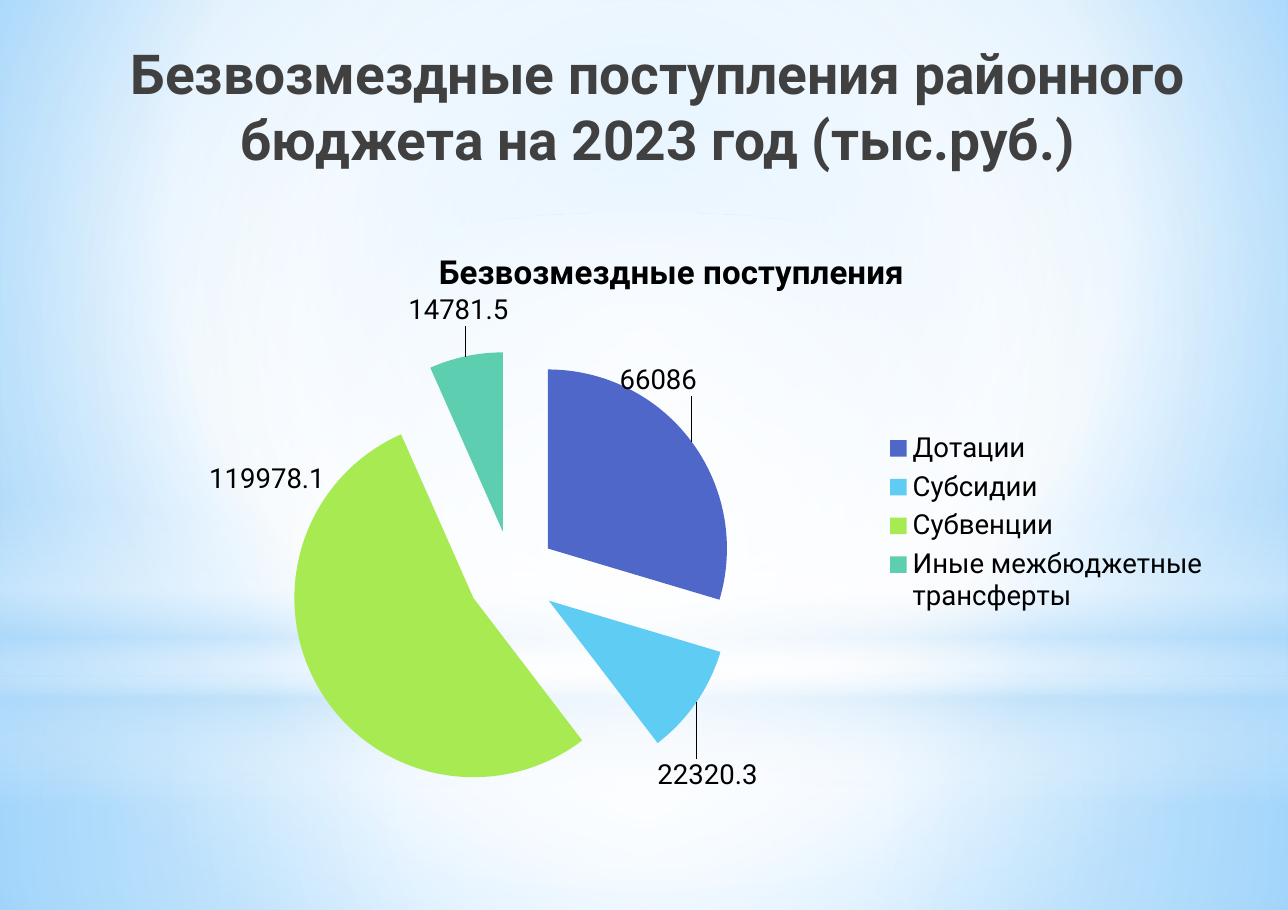
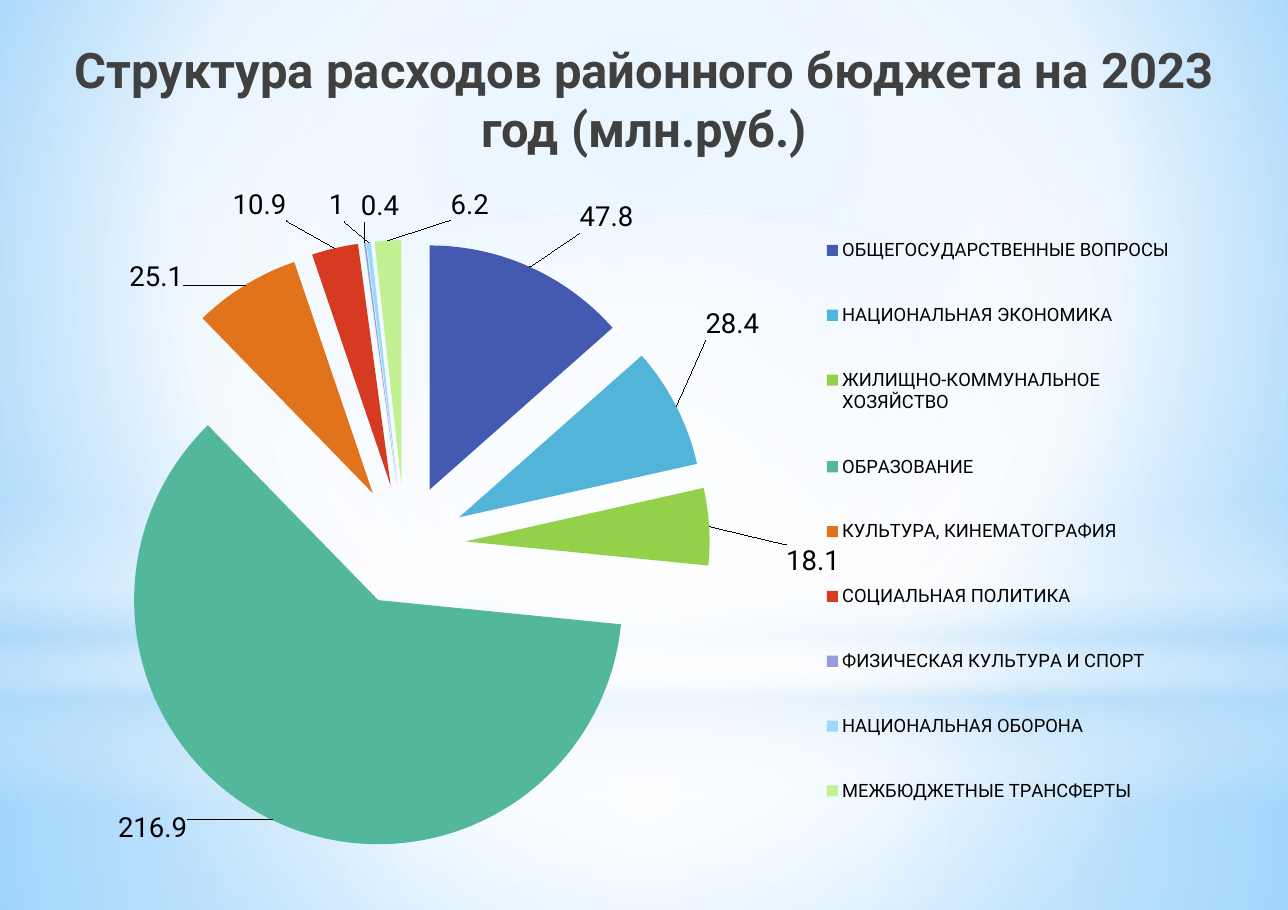
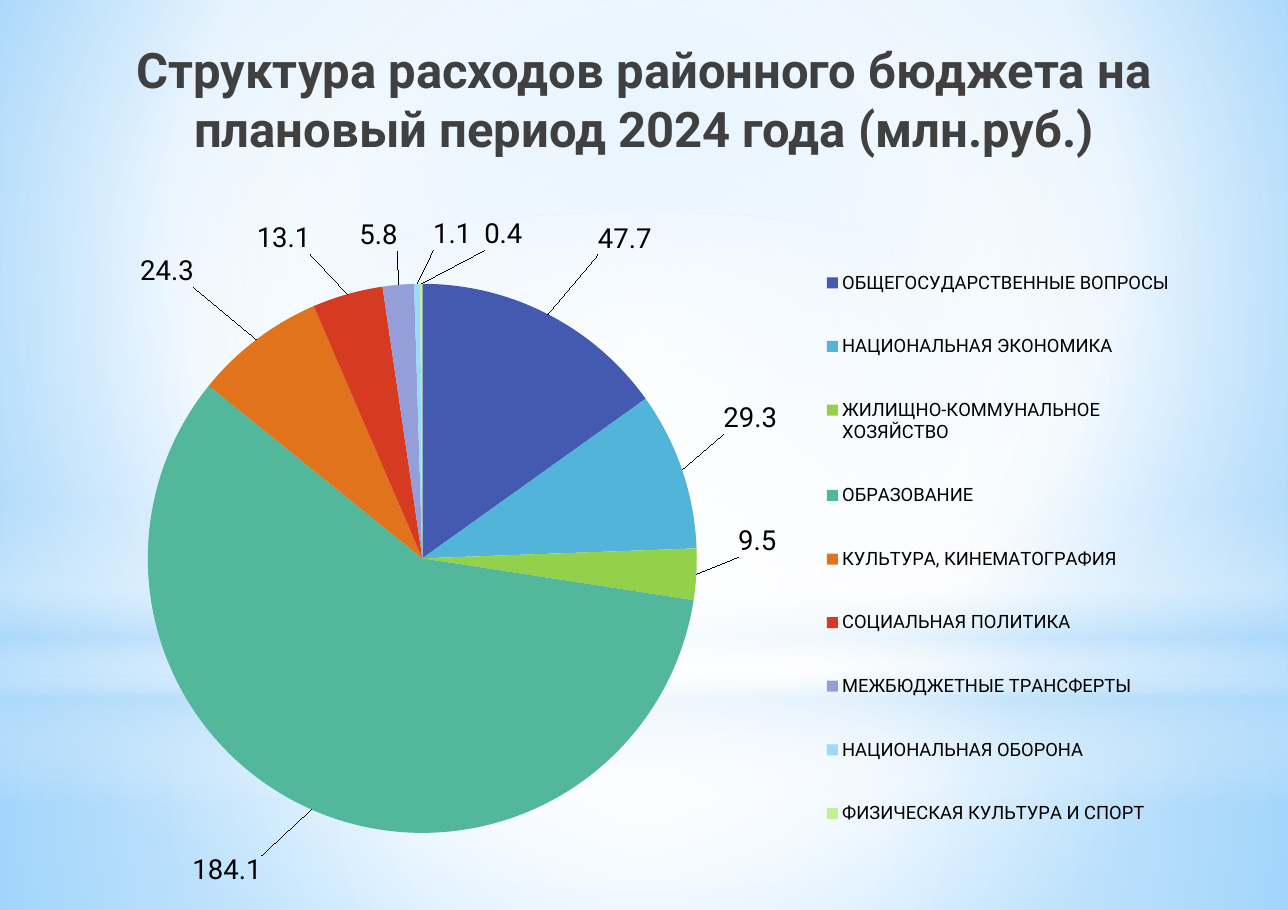
from dataclasses import dataclass

import pptx
import pptx.chart.data
import pptx.dml.color
import pptx.enum.chart
import pptx.enum.shapes
import pptx.enum.text
import pptx.oxml
import pptx.oxml.ns
import pptx.util

Cm = pptx.util.Cm
Pt = pptx.util.Pt
qn = pptx.oxml.ns.qn

FONT = "Roboto"
COLORS = {
    "title": "404040", "text": "000000", "white": "FFFFFF", "haze": "B4DCFA",
    "sky": "9ED5FF", "deep": "5BB9FF",
}
BRIGHT = ["4E67C8", "5ECCF3", "A7EA52", "5DCEAF"]
MUTED = ["4459B0", "52B4D8", "94D14A", "53B79B", "E2731D",
         "D63A20", "949ED8", "9ADAF8", "C1F192"]

Box = tuple[float, float, float, float]
Stop = tuple[int, str, int]  # position %, colour name, opacity %


@dataclass
class Band:
    kind: str
    box: Box
    stops: list[Stop]
    center: Box | None = (50, 50, 50, 50)


@dataclass
class Slice:
    name: str
    value: float
    shift: tuple[float, float]  # label offset, share of the chart size


@dataclass
class Page:
    title: str
    size: int
    frame: Box
    area: Box
    plot: Box
    legend: Box
    key_size: int
    series: str
    colors: list[str]
    slices: list[Slice]
    burst: int = 0
    heading: bool = False


BACK = [(0, "sky", 100), (60, "white", 100), (100, "deep", 100)]

BANDS = [
    Band("RECTANGLE", (0, 15.62, 29.7, 5.36),
         [(0, "white", 91), (37, "white", 76), (100, "haze", 79)]),
    Band("RECTANGLE", (0, 0, 29.7, 15.62),
         [(0, "white", 89), (48, "white", 62), (100, "haze", 79)]),
    Band("RECTANGLE", (0, 11.53, 29.7, 6.99),
         [(0, "white", 0), (29, "white", 30), (45, "haze", 40),
          (55, "white", 26), (65, "haze", 60), (100, "white", 0)], None),
    Band("OVAL", (0, 4.9, 29.7, 15.62), [(0, "white", 100), (56, "white", 0)]),
]

STATE = "ОБЩЕГОСУДАРСТВЕННЫЕ ВОПРОСЫ"
TRADE = "НАЦИОНАЛЬНАЯ ЭКОНОМИКА"
HOUSING = "ЖИЛИЩНО-КОММУНАЛЬНОЕ ХОЗЯЙСТВО"
SCHOOL = "ОБРАЗОВАНИЕ"
CULTURE = "КУЛЬТУРА, КИНЕМАТОГРАФИЯ"
SOCIAL = "СОЦИАЛЬНАЯ ПОЛИТИКА"
SPORT = "ФИЗИЧЕСКАЯ КУЛЬТУРА И СПОРТ"
DEFENCE = "НАЦИОНАЛЬНАЯ ОБОРОНА"
GRANTS = "МЕЖБЮДЖЕТНЫЕ ТРАНСФЕРТЫ"

PAGES = [
    Page("Безвозмездные поступления районного бюджета на 2023 год (тыс.руб.)",
         36, (1.3, 0.76, 27.74, 3.61), (2.79, 5.21, 25.4, 13.54),
         (0.19, 0.29, 0.33, 0.61), (0.69, 0.34, 0.3, 0.33), 18,
         "Безвозмездные поступления", BRIGHT,
         [Slice("Дотации", 66086, (-0.07, -0.07)),
          Slice("Субсидии", 22320.3, (-0.04, 0.09)),
          Slice("Субвенции", 119978.1, (0.01, -0.39)),
          Slice("Иные межбюджетные трансферты", 14781.5, (0.04, -0.04))],
         burst=25, heading=True),
    Page("Структура расходов районного бюджета на 2023 год (млн.руб.)",
         32, (0.89, 0.76, 27.94, 3.18), (0.66, 4.37, 27.1, 16.08),
         (0.11, 0.16, 0.42, 0.7), (0.67, 0.01, 0.31, 0.93), 12,
         "Series 1", MUTED,
         [Slice(STATE, 47.8, (0.04, -0.04)),
          Slice(TRADE, 28.4, (0.02, -0.09)),
          Slice(HOUSING, 18.1, (0.06, 0.05)),
          Slice(SCHOOL, 216.9, (-0.07, -0.02)),
          Slice(CULTURE, 25.1, (-0.05, 0.02)),
          Slice(SOCIAL, 10.9, (-0.04, -0.03)),
          Slice(SPORT, 0.4, (0.03, -0.02)),
          Slice(DEFENCE, 1, (-0.02, -0.02)),
          Slice(GRANTS, 6.2, (0.07, -0.02))],
         burst=25),
    Page("Структура расходов районного бюджета на плановый период 2024 года (млн.руб.)",
         32, (0.89, 0.76, 27.94, 3.18), (0.66, 5, 27.1, 15.44),
         (0.06, 0.1, 0.55, 0.82), (0.67, 0.02, 0.31, 0.95), 12,
         "Series 1", MUTED,
         [Slice(STATE, 47.7, (0.04, -0.08)),
          Slice(TRADE, 29.3, (0.03, -0.05)),
          Slice(HOUSING, 9.5, (0.03, -0.05)),
          Slice(SCHOOL, 184.1, (-0.04, 0.06)),
          Slice(CULTURE, 24.3, (-0.05, -0.07)),
          Slice(SOCIAL, 13.1, (-0.03, -0.05)),
          Slice(GRANTS, 5.8, (0, -0.04)),
          Slice(DEFENCE, 1.1, (0.03, -0.04)),
          Slice(SPORT, 0.4, (0.07, -0.04))]),
]


def rgb(code: str) -> pptx.dml.color.RGBColor:
    return pptx.dml.color.RGBColor.from_string(code)


def lengths(box: Box) -> list[int]:
    return [Cm(side) for side in box]


def blend(owner, stops: list[Stop], center: Box | None) -> None:
    """Turn the solid fill inside owner into a gradient, radial if it has a center."""
    marks = "".join(
        f'<a:gs pos="{pos * 1000}"><a:srgbClr val="{COLORS[name]}">'
        f'<a:alpha val="{alpha * 1000}"/></a:srgbClr></a:gs>'
        for pos, name, alpha in stops)
    if center:
        sides = " ".join(f'{side}="{share * 1000}"' for side, share in zip("ltrb", center))
        way = f'<a:path path="circle"><a:fillToRect {sides}/></a:path>'
    else:
        way = '<a:lin ang="5400000" scaled="0"/>'
    fill = pptx.oxml.parse_xml(
        f'<a:gradFill {pptx.oxml.ns.nsdecls("a")} rotWithShape="1">'
        f'<a:gsLst>{marks}</a:gsLst>{way}</a:gradFill>')
    solid = next(owner.iter(qn("a:solidFill")))
    solid.getparent().replace(solid, fill)


def place(owner, index: int, spots: tuple[float, ...], head: str = "") -> None:
    """Give a chart part a manual layout as its child number index."""
    for old in owner.findall(qn("c:layout")):
        owner.remove(old)
    parts = "".join(f'<c:{key} val="{spot}"/>' for key, spot in zip("xywh", spots))
    owner.insert(index, pptx.oxml.parse_xml(
        f'<c:layout {pptx.oxml.ns.nsdecls("c")}><c:manualLayout>'
        f'{head}{parts}</c:manualLayout></c:layout>'))


def dress(master, slide) -> None:
    """Set the background and bands on the master, drawing them through a slide."""
    back = master.background.fill
    back.solid()
    back.fore_color.rgb = rgb(COLORS["white"])
    blend(master.element, BACK, (20, 10, 20, 60))
    for i, band in enumerate(BANDS):
        kind = pptx.enum.shapes.MSO_SHAPE[band.kind]
        shape = slide.shapes.add_shape(kind, *lengths(band.box))
        shape.shadow.inherit = False
        shape.line.fill.background()
        shape.fill.solid()
        shape.fill.fore_color.rgb = rgb(COLORS["white"])
        blend(shape.element, band.stops, band.center)
        shape.element.nvSpPr.cNvPr.set("id", str(20 + i))
        master.shapes.element.insert(2 + i, shape.element)


def style(font, size: float, color: str, bold: bool = False) -> None:
    font.name = FONT
    font.size = Pt(size)
    font.bold = bold
    font.color.rgb = rgb(COLORS[color])


def head(slide, page: Page) -> None:
    title = slide.shapes.title
    title.left, title.top, title.width, title.height = lengths(page.frame)
    frame = title.text_frame
    frame.text = page.title
    frame.word_wrap = True
    frame.auto_size = pptx.enum.text.MSO_AUTO_SIZE.NONE
    frame.vertical_anchor = pptx.enum.text.MSO_ANCHOR.TOP
    frame.margin_left = frame.margin_right = Cm(0.28)
    frame.margin_top = frame.margin_bottom = Cm(0.15)
    line = frame.paragraphs[0]
    line.alignment = pptx.enum.text.PP_ALIGN.CENTER
    style(line.runs[0].font, page.size, "title", True)


def pie(slide, page: Page) -> None:
    enum = pptx.enum.chart
    data = pptx.chart.data.CategoryChartData()
    data.categories = [part.name for part in page.slices]
    data.add_series(page.series, [part.value for part in page.slices])
    chart = slide.shapes.add_chart(
        enum.XL_CHART_TYPE.PIE, *lengths(page.area), data).chart
    style(chart.font, 18, "text")

    chart.has_title = page.heading
    if page.heading:
        frame = chart.chart_title.text_frame
        frame.text = page.series
        style(frame.paragraphs[0].runs[0].font, 21.6, "text", True)

    chart.has_legend = True
    legend = chart.legend
    legend.position = enum.XL_LEGEND_POSITION.RIGHT
    legend.include_in_layout = False
    style(legend.font, page.key_size, "text")
    edge = '<c:xMode val="edge"/><c:yMode val="edge"/>'
    root = chart.element
    place(next(root.iter(qn("c:legend"))), 1, page.legend, edge)
    place(next(root.iter(qn("c:plotArea"))), 0, page.plot,
          '<c:layoutTarget val="inner"/>' + edge)

    plot = chart.plots[0]
    plot.vary_by_categories = True
    series = plot.series[0]
    labels = series.data_labels
    labels.show_value = True
    labels.number_format = "General"
    labels.number_format_is_linked = False
    labels.position = enum.XL_LABEL_POSITION.OUTSIDE_END
    for i, color in enumerate(page.colors):
        point = series.points[i]
        point.format.fill.solid()
        point.format.fill.fore_color.rgb = rgb(color)
        point.data_label.position = enum.XL_LABEL_POSITION.OUTSIDE_END
    for label, part in zip(root.iter(qn("c:dLbl")), page.slices):
        place(label, 1, part.shift)
    if page.burst:
        for point in root.iter(qn("c:dPt")):
            point.find(qn("c:spPr")).addprevious(pptx.oxml.parse_xml(
                f'<c:explosion {pptx.oxml.ns.nsdecls("c")} val="{page.burst}"/>'))


def main() -> None:
    deck = pptx.Presentation()
    deck.slide_width, deck.slide_height = Cm(29.7), Cm(20.98)
    for page in PAGES:
        slide = deck.slides.add_slide(deck.slide_layouts[5])
        head(slide, page)
        pie(slide, page)
    dress(deck.slide_master, deck.slides[0])
    deck.save("out.pptx")


if __name__ == "__main__":
    main()
